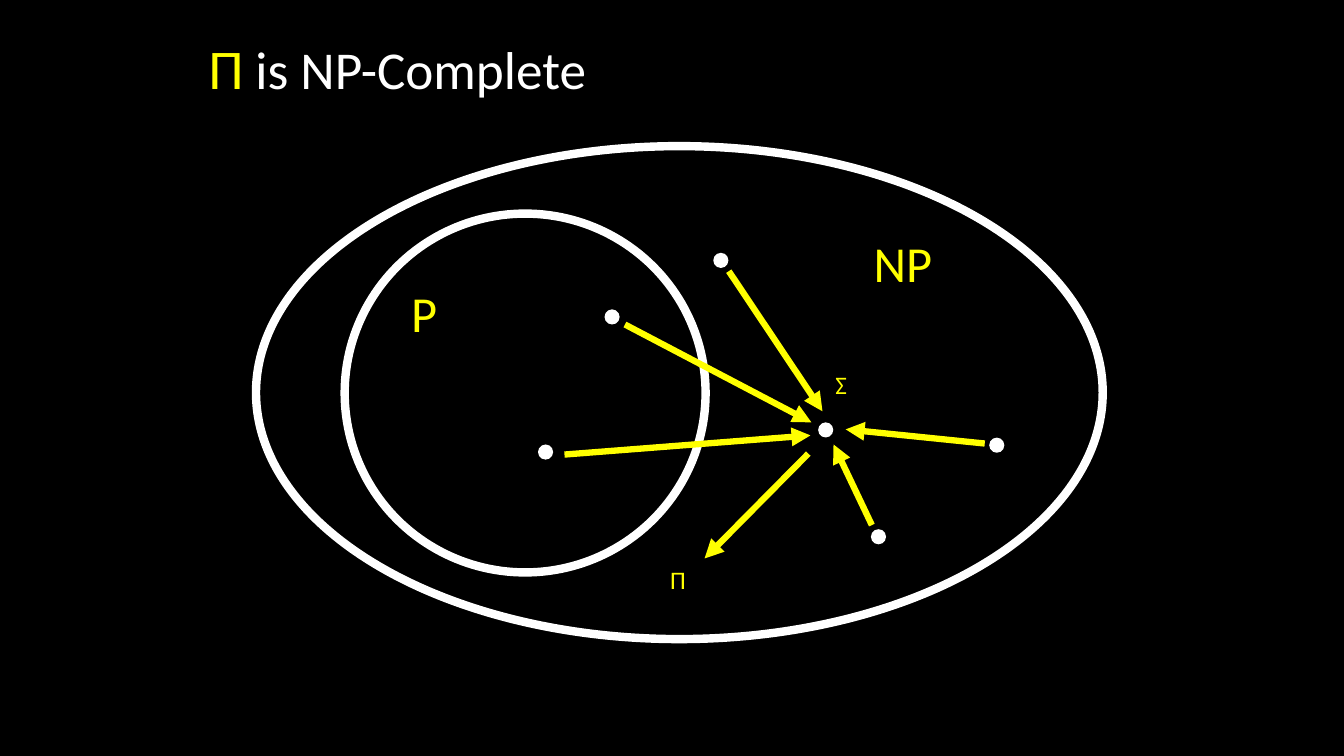
from lxml import etree
from pptx import Presentation
from pptx.dml.color import RGBColor
from pptx.enum.shapes import MSO_CONNECTOR, MSO_SHAPE
from pptx.enum.text import MSO_ANCHOR, MSO_AUTO_SIZE, PP_ALIGN
from pptx.oxml.ns import qn
from pptx.util import Pt

OVAL = MSO_SHAPE.OVAL
STRAIGHT = MSO_CONNECTOR.STRAIGHT
TOP = MSO_ANCHOR.TOP
LEFT = PP_ALIGN.LEFT
NO_AUTOFIT = MSO_AUTO_SIZE.NONE

BLACK, WHITE, YELLOW = "000000", "FFFFFF", "FFFF00"
FONT = "Calibri"
SLIDE_SIZE = (960, 540)
TITLE_BOX = (141.8, 20.2, 303.1, 53.3)
TITLE_RUNS = [("Π", 40, YELLOW), (" is NP-Complete", 38, WHITE)]

CLASS_OUTLINES = [
    (182.9, 104.4, 604.8, 352.1),
    (246.2, 152.6, 257.8, 256.3),
]
LABELS = [
    ("P", 36, (286.6, 198, 34.6, 49)),
    ("NP", 36, (617, 162, 61.9, 49)),
    ("Σ", 18, (589.7, 260.6, 28.8, 34.6)),
    ("Π", 18, (471.6, 399.6, 33.1, 34.6)),
]
DOT_SIZE = 10.8
PROBLEM_CENTERS = [
    (589.8, 307.1),
    (389.7, 322.9),
    (514.9, 186),
    (712, 318),
    (627.5, 383.4),
    (437.2, 226.4),
]
REDUCTIONS = [
    ((446.4, 231.8), (579.6, 301.7)),
    ((403.2, 324.7), (578.9, 311)),
    ((622.8, 375.1), (595.4, 317.5)),
    ((703.4, 316.8), (604.1, 306.7)),
    ((520.6, 193.7), (587.5, 293.8)),
    ((577.4, 324), (503.3, 398.9)),
]


def color(value):
    return RGBColor.from_string(value)


def points(values):
    return [Pt(value) for value in values]


def add_run(paragraph, text, *, size, fill):
    run = paragraph.add_run()
    run.text = text
    run.font.name = FONT
    run.font.size = Pt(size)
    run.font.color.rgb = color(fill)


def write(frame, runs):
    frame.auto_size = NO_AUTOFIT
    frame.word_wrap = False
    frame.vertical_anchor = TOP
    paragraph = frame.paragraphs[0]
    paragraph.alignment = LEFT
    for text, size, fill in runs:
        add_run(paragraph, text, size=size, fill=fill)


def add_oval(slide, box):
    oval = slide.shapes.add_shape(OVAL, *points(box))
    oval.shadow.inherit = False
    return oval


def add_class(slide, box):
    outline = add_oval(slide, box)
    outline.fill.background()
    outline.line.color.rgb = color(WHITE)
    outline.line.width = Pt(6)


def add_problem(slide, center):
    x, y = center
    dot = add_oval(slide, (x - DOT_SIZE / 2, y - DOT_SIZE / 2, DOT_SIZE, DOT_SIZE))
    dot.fill.solid()
    dot.fill.fore_color.rgb = color(WHITE)
    dot.line.fill.background()


def add_reduction(slide, start, end):
    arrow = slide.shapes.add_connector(STRAIGHT, *points(start + end))
    arrow.line.color.rgb = color(YELLOW)
    arrow.line.width = Pt(4.5)
    etree.SubElement(arrow.line._get_or_add_ln(), qn("a:tailEnd"), type="triangle")
    etree.SubElement(arrow._element.spPr, qn("a:effectLst"))


def main():
    deck = Presentation()
    deck.slide_width, deck.slide_height = points(SLIDE_SIZE)
    slide = deck.slides.add_slide(deck.slide_layouts[5])
    slide.background.fill.solid()
    slide.background.fill.fore_color.rgb = color(BLACK)

    title = slide.shapes.title
    title.left, title.top, title.width, title.height = points(TITLE_BOX)
    write(title.text_frame, TITLE_RUNS)

    for box in CLASS_OUTLINES:
        add_class(slide, box)
    for text, size, box in LABELS:
        label = slide.shapes.add_textbox(*points(box))
        write(label.text_frame, [(text, size, YELLOW)])
    for center in PROBLEM_CENTERS:
        add_problem(slide, center)
    for start, end in REDUCTIONS:
        add_reduction(slide, start, end)

    deck.save("out.pptx")


if __name__ == "__main__":
    main()
